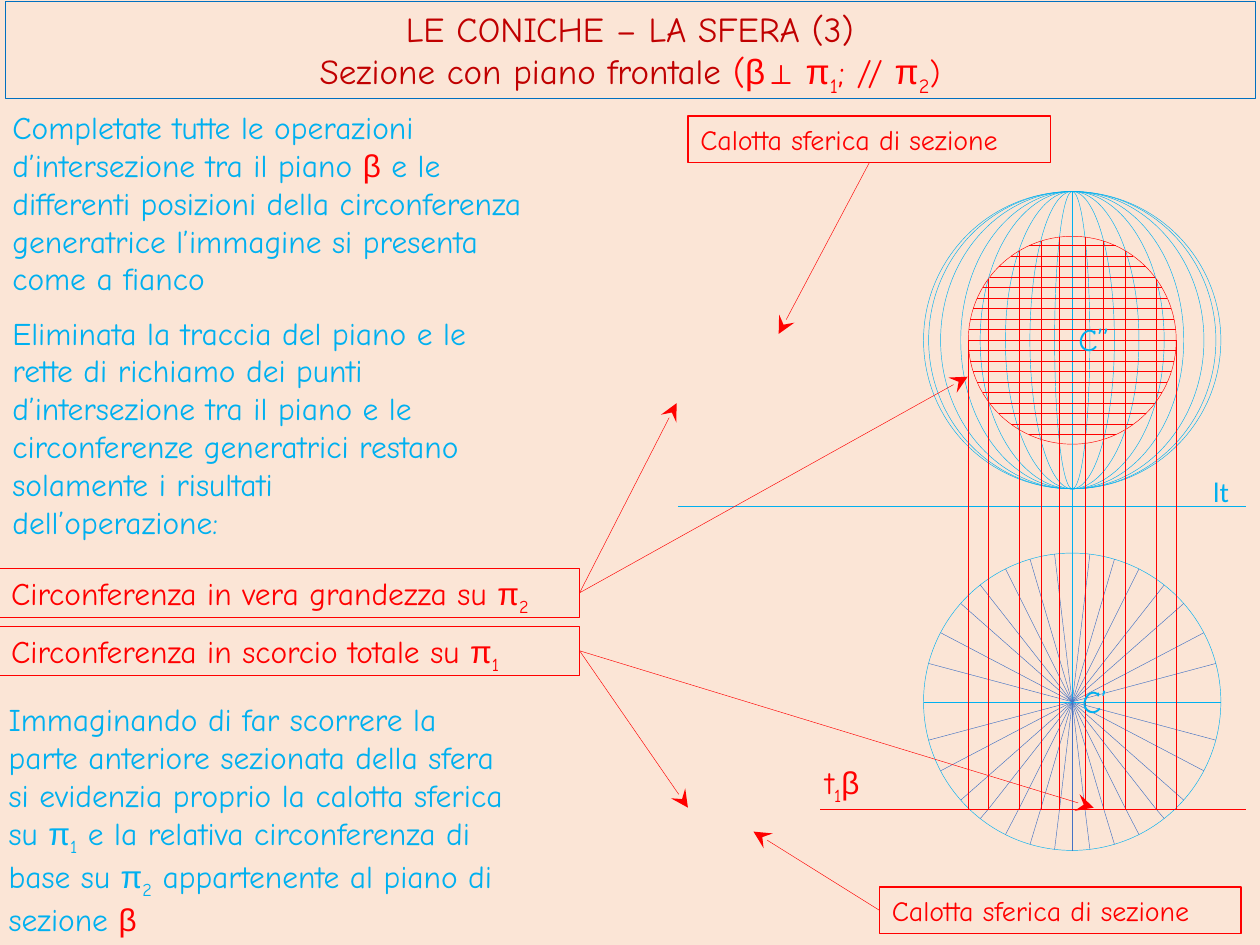
import dataclasses
import math
import typing

import lxml.etree
import pptx
import pptx.dml.color
import pptx.enum.shapes
import pptx.enum.text
import pptx.oxml.ns
import pptx.util

Inches = pptx.util.Inches
Preset = pptx.enum.shapes.MSO_SHAPE
Point = tuple[float, float]
Box = tuple[float, float, float, float]

COLORS = {"paper": "FBE5D6", "frame": "0070C0", "title": "C00000",
          "red": "FF0000", "sky": "00B0F0", "radius": "4472C4"}
TEXT_FONT, GREEK_FONT = "Comic Neue", "Arial"

# Sphere geometry: common axis, centres of the two views, radii, section plane
AXIS, FRONT_Y, PLAN_Y = 8.51, 2.7, 5.57
RADIUS, SECTION_RADIUS, PLANE_Y = 1.18, 0.825, 6.42
CUT_HALF_WIDTHS = (0.73, 0.53, 0.335, 0.14)
UNCUT_HALF_WIDTHS = (0.885, 1.045, 1.14)
RIGHT_SIDE, BOTTOM_SIDE, LEFT_SIDE = 3, 2, 1


@dataclasses.dataclass(frozen=True)
class Run:
    text: str
    color: str | None = None
    font: str = TEXT_FONT
    size: float | None = None
    subscript: bool = False
    bold: bool = False


@dataclasses.dataclass(frozen=True)
class Callout:
    box: Box
    runs: list[Run]
    side: int
    targets: list[Point]
    size: float = 18
    border: float = 0.25


def rgb(name: str) -> pptx.dml.color.RGBColor:
    return pptx.dml.color.RGBColor.from_string(COLORS[name])


def greek(letter: str, color: str | None = None) -> Run:
    return Run(letter, color, GREEK_FONT)


def pi(index: str) -> list[Run]:
    return [greek("π"), Run(index, subscript=True)]


def write(shape: typing.Any, *paragraphs: list[Run], size: float = 18, color: str = "sky",
          align: str = "LEFT", anchor: str = "TOP", wrap: bool = True) -> None:
    frame = shape.text_frame
    frame.word_wrap = wrap
    frame.auto_size = pptx.enum.text.MSO_AUTO_SIZE.SHAPE_TO_FIT_TEXT
    frame.vertical_anchor = getattr(pptx.enum.text.MSO_ANCHOR, anchor)
    for index, runs in enumerate(paragraphs):
        paragraph = frame.add_paragraph() if index else frame.paragraphs[0]
        paragraph.alignment = getattr(pptx.enum.text.PP_ALIGN, align)
        for part in runs:
            run = paragraph.add_run()
            run.text = part.text
            run.font.name = part.font
            run.font.size = pptx.util.Pt(part.size or size)
            run.font.bold = part.bold
            run.font.color.rgb = rgb(part.color or color)
            if part.subscript:
                run._r.get_or_add_rPr().set("baseline", "-25000")


def draw_outline(shapes: typing.Any, preset: Preset, box: Box, color: str,
                 width: float = 0.25) -> typing.Any:
    shape = shapes.add_shape(preset, *map(Inches, box))
    shape.shadow.inherit = False
    shape.fill.background()
    shape.line.color.rgb = rgb(color)
    shape.line.width = pptx.util.Pt(width)
    return shape


def draw_line(shapes: typing.Any, start: Point, end: Point, color: str,
              arrow: bool = False) -> typing.Any:
    line = shapes.add_connector(pptx.enum.shapes.MSO_CONNECTOR.STRAIGHT,
                                *map(Inches, (*start, *end)))
    line.line.color.rgb = rgb(color)
    line.line.width = pptx.util.Pt(0.25)
    qn = pptx.oxml.ns.qn
    if arrow:
        lxml.etree.SubElement(line.line._get_or_add_ln(), qn("a:tailEnd"),
                              type="stealth", w="lg", len="lg")
    lxml.etree.SubElement(line._element.spPr, qn("a:effectLst"))
    return line


def centred_box(half_width: float, center_y: float, half_height: float = RADIUS) -> Box:
    return AXIS - half_width, center_y - half_height, 2 * half_width, 2 * half_height


def draw_arc(shapes: typing.Any, box: Box, start: float, end: float) -> None:
    """Draw an arc clockwise between two angles in degrees."""
    arc = draw_outline(shapes, Preset.ARC, box, "sky")
    for index, angle in enumerate((start, end)):
        arc.adjustments[index] = angle * 0.6


def leg(hypotenuse: float, other: float) -> float:
    return math.sqrt(hypotenuse ** 2 - other ** 2)


def section_crossing(half_width: float) -> float:
    """Distance from the axis where a generating ellipse meets the section circle."""
    sine_squared = (SECTION_RADIUS ** 2 - half_width ** 2) / (RADIUS ** 2 - half_width ** 2)
    return half_width * math.sqrt(1 - sine_squared)


def draw_front_view(shapes: typing.Any, cap: typing.Any) -> None:
    for half_width in (RADIUS, *UNCUT_HALF_WIDTHS):
        draw_outline(shapes, Preset.OVAL, centred_box(half_width, FRONT_Y), "sky")
    for half_width in CUT_HALF_WIDTHS:
        angle = math.degrees(math.acos(section_crossing(half_width) / SECTION_RADIUS))
        cuts = [angle, 180 - angle, 180 + angle, 360 - angle]
        for index, start in enumerate(cuts):
            owner = cap if index % 2 else shapes
            draw_arc(owner, centred_box(half_width, FRONT_Y), start, cuts[(index + 1) % 4])
    draw_outline(cap, Preset.OVAL, centred_box(SECTION_RADIUS, FRONT_Y, SECTION_RADIUS), "red")
    levels = [FRONT_Y + part * radius for part, radius in
              ((-1, RADIUS), (-1, SECTION_RADIUS), (1, SECTION_RADIUS), (1, RADIUS))]
    for top, bottom in zip(levels, levels[1:]):
        draw_line(shapes, (AXIS, top), (AXIS, bottom), "sky")
    draw_line(shapes, (AXIS - 0.05, FRONT_Y), (AXIS + 0.05, FRONT_Y), "sky")


def draw_plan_view(shapes: typing.Any, cap: typing.Any) -> None:
    angle = math.degrees(math.asin((PLANE_Y - PLAN_Y) / RADIUS))
    plan_box = centred_box(RADIUS, PLAN_Y)
    draw_arc(shapes, plan_box, 180 - angle, angle)
    draw_arc(cap, plan_box, angle, 180 - angle)
    for side in (-1, 1):
        for half_width in UNCUT_HALF_WIDTHS:
            dx, dy = side * half_width, leg(RADIUS, half_width)
            draw_line(shapes, (AXIS - dx, PLAN_Y + dy), (AXIS + dx, PLAN_Y - dy), "radius")
        for half_width in CUT_HALF_WIDTHS:
            dx, dy = side * half_width, leg(RADIUS, half_width)
            cut = AXIS - side * section_crossing(half_width), PLANE_Y
            draw_line(shapes, cut, (AXIS + dx, PLAN_Y - dy), "radius")
            draw_line(cap, (AXIS - dx, PLAN_Y + dy), cut, "radius")
    draw_line(shapes, (AXIS - RADIUS, PLAN_Y), (AXIS + RADIUS, PLAN_Y), "sky")
    draw_line(shapes, (AXIS, PLAN_Y), (AXIS, PLANE_Y), "radius")
    draw_line(cap, (AXIS, PLANE_Y), (AXIS, PLAN_Y + RADIUS), "radius")
    draw_line(cap, (AXIS, FRONT_Y), (AXIS, PLANE_Y), "sky")


def draw_section(shapes: typing.Any, hatching: typing.Any) -> None:
    draw_line(shapes, (6.51, PLANE_Y), (9.89, PLANE_Y), "red")
    draw_line(shapes, (AXIS - SECTION_RADIUS, PLANE_Y), (AXIS + SECTION_RADIUS, PLANE_Y), "red")
    for offset in (SECTION_RADIUS, *map(section_crossing, CUT_HALF_WIDTHS)):
        top = FRONT_Y - leg(SECTION_RADIUS, offset)
        for x in (AXIS - offset, AXIS + offset):
            draw_line(shapes, (x, top), (x, PLANE_Y), "red")
    for step in range(-9, 10):
        rise = step / 12
        half = leg(SECTION_RADIUS, rise)
        draw_line(hatching, (AXIS - half, FRONT_Y + rise), (AXIS + half, FRONT_Y + rise), "red")


CAP_NAME = [Run("Calotta sferica di sezione")]
CALLOUTS = [
    Callout((-0.01, 4.97, 4.61, 0.39), [Run("Circonferenza in scorcio totale su "), *pi("1")],
            RIGHT_SIDE, [(8.68, 6.41), (5.46, 6.41)]),
    Callout((-0.01, 4.51, 4.61, 0.39), [Run("Circonferenza in vera grandezza su "), *pi("2")],
            RIGHT_SIDE, [(7.68, 2.99), (5.37, 3.2)]),
    Callout((5.46, 0.92, 2.88, 0.37), CAP_NAME, BOTTOM_SIDE, [(6.18, 2.65)], 16, 0.75),
    Callout((6.98, 7.04, 2.87, 0.37), CAP_NAME, LEFT_SIDE, [(5.98, 6.6)], 16, 0.75),
]
EXPLANATIONS = [
    ((0, 0.81, 4.43, 1.62), [
        Run("Completate tutte le operazioni d’intersezione tra il piano "), greek("β", "red"),
        Run(" e le differenti posizioni della circonferenza generatrice l’immagine "
            "si presenta come a fianco")]),
    ((0, 2.44, 3.94, 1.92), [
        Run("Eliminata la traccia del piano e le rette di richiamo dei punti d’intersezione tra "
            "il piano e le circonferenze generatrici restano solamente i risultati "
            "dell’operazione:")]),
    ((-0.03, 5.51, 4.14, 1.92), [
        Run("Immaginando di far scorrere la parte anteriore sezionata della sfera si evidenzia "
            "proprio la calotta sferica su "), *pi("1"),
        Run(" e la relativa circonferenza di base su "), *pi("2"),
        Run(" appartenente al piano di sezione "), greek("β", "red")]),
]


def main() -> None:
    deck = pptx.Presentation()
    deck.slide_width, deck.slide_height = Inches(10), Inches(7.5)
    slide = deck.slides.add_slide(deck.slide_layouts[6])
    slide.background.fill.solid()
    slide.background.fill.fore_color.rgb = rgb("paper")
    shapes = slide.shapes

    title = draw_outline(shapes, Preset.RECTANGLE, (0.04, 0.01, 9.92, 0.77), "frame")
    title.fill.solid()
    title.fill.fore_color.rgb = rgb("paper")
    write(title, [Run("LE CONICHE – LA SFERA (3)", "title")],
          [Run("Sezione con piano frontale ", "title"), Run("("), greek("β"),
           Run("⊥ ", font=GREEK_FONT, size=18, bold=True), *pi("1"), Run("; // "), *pi("2"),
           Run(")", size=18)], size=20, color="red", align="CENTER")

    cap = shapes.add_group_shape().shapes
    draw_front_view(shapes, cap)
    draw_plan_view(shapes, cap)
    draw_line(shapes, (5.38, 4.02), (9.89, 4.02), "sky")
    draw_section(shapes, shapes.add_group_shape().shapes)

    for box, runs, anchor in (
            ((8.46, 2.49, 0.47, 0.4), [Run("C’’")], "MIDDLE"),
            ((8.49, 5.36, 0.47, 0.4), [Run("C’")], "MIDDLE"),
            ((9.53, 3.72, 0.38, 0.37), [Run("lt", font="Calibri", size=16)], "TOP"),
            ((6.45, 6.01, 0.56, 0.4),
             [Run("t", "red"), Run("1", "red", subscript=True), greek("β", "red")], "TOP")):
        write(shapes.add_textbox(*map(Inches, box)), runs, anchor=anchor, wrap=False)
    for box, runs in EXPLANATIONS:
        write(shapes.add_textbox(*map(Inches, box)), runs)
    for callout in CALLOUTS:
        frame = draw_outline(shapes, Preset.RECTANGLE, callout.box, "red", callout.border)
        write(frame, callout.runs, size=callout.size, color="red")
        for target in callout.targets:
            arrow = draw_line(shapes, callout.box[:2], target, "red", arrow=True)
            arrow.begin_connect(frame, callout.side)

    deck.save("out.pptx")


if __name__ == "__main__":
    main()
